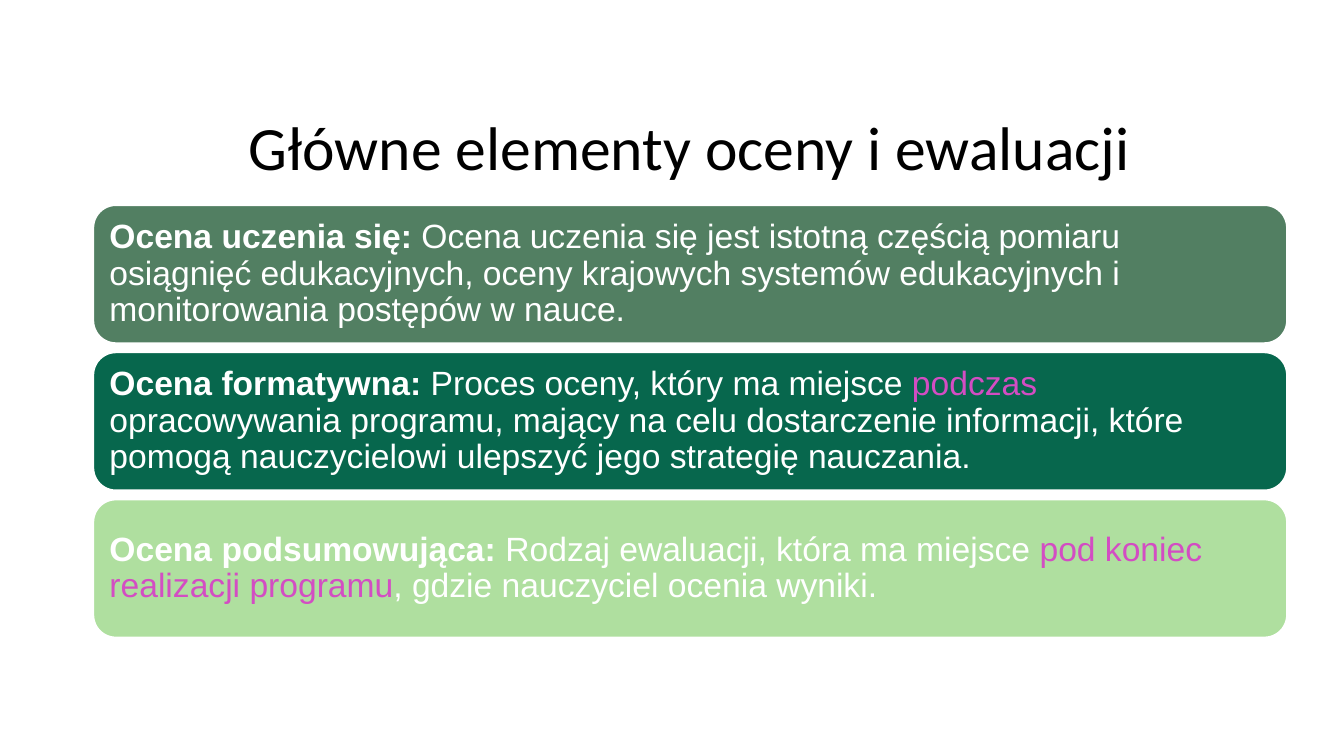
from pptx import Presentation
from pptx.dml.color import RGBColor
from pptx.enum import shapes, text
from pptx.util import Inches, Pt

WHITE = RGBColor(0xFF, 0xFF, 0xFF)
BLACK = RGBColor(0x00, 0x00, 0x00)
PINK = RGBColor(0xD3, 0x4D, 0xC3)
SAGE = RGBColor(0x52, 0x7F, 0x62)
DARK_GREEN = RGBColor(0x07, 0x67, 0x4D)
LIGHT_GREEN = RGBColor(0xAF, 0xDF, 0x9F)

TITLE = "Główne elementy oceny i ewaluacji"
# Each panel: fill, bold term, then (text, colour) pieces of its definition
PANELS = [
    (SAGE, "Ocena uczenia się: ", [
        ("Ocena uczenia się jest istotną częścią pomiaru osiągnięć edukacyjnych, "
         "oceny krajowych systemów edukacyjnych i monitorowania postępów w nauce.", WHITE),
    ]),
    (DARK_GREEN, "Ocena formatywna: ", [
        ("Proces oceny, który ma miejsce ", WHITE),
        ("podczas", PINK),
        (" opracowywania programu, mający na celu dostarczenie informacji, "
         "które pomogą nauczycielowi ulepszyć jego strategię nauczania.", WHITE),
    ]),
    (LIGHT_GREEN, "Ocena podsumowująca: ", [
        ("Rodzaj ewaluacji, która ma miejsce ", WHITE),
        ("pod koniec realizacji programu", PINK),
        (", gdzie nauczyciel ocenia wyniki.", WHITE),
    ]),
]
PANEL_LEFT, PANEL_TOP = 0.92, 2.03
PANEL_WIDTH, PANEL_HEIGHT, PANEL_STEP = 11.85, 1.38, 1.46


def set_attributes(target, values):
    for name, value in values.items():
        setattr(target, name, value)


def add_run(paragraph, content, color, **font_values):
    run = paragraph.add_run()
    run.text = content
    set_attributes(run.font, font_values)
    run.font.color.rgb = color


def format_frame(frame, alignment, vertical_margin):
    """Set the frame's layout and return its first paragraph."""
    set_attributes(frame, {
        "word_wrap": True,
        "auto_size": text.MSO_AUTO_SIZE.NONE,
        "vertical_anchor": text.MSO_ANCHOR.MIDDLE,
        "margin_left": Inches(0.1),
        "margin_right": Inches(0.1),
        "margin_top": Inches(vertical_margin),
        "margin_bottom": Inches(vertical_margin),
    })
    paragraph = frame.paragraphs[0]
    set_attributes(paragraph, {
        "alignment": alignment,
        "line_spacing": 0.9,
        "space_before": Pt(0),
    })
    return paragraph


def fill_title(slide):
    title = slide.shapes.title
    set_attributes(title, {
        "left": Inches(1.09),
        "top": Inches(0.82),
        "width": Inches(11.5),
        "height": Inches(1.35),
    })
    paragraph = format_frame(title.text_frame, text.PP_ALIGN.CENTER, 0.05)
    add_run(paragraph, TITLE, BLACK, name="Calibri", size=Pt(44))


def add_panel(slide, top, fill_color, term, definition):
    panel = slide.shapes.add_shape(
        shapes.MSO_SHAPE.ROUNDED_RECTANGLE, Inches(PANEL_LEFT), Inches(top),
        Inches(PANEL_WIDTH), Inches(PANEL_HEIGHT))
    panel.shadow.inherit = False
    panel.fill.solid()
    panel.fill.fore_color.rgb = fill_color
    panel.line.color.rgb = WHITE
    panel.line.width = Pt(2)
    paragraph = format_frame(panel.text_frame, text.PP_ALIGN.LEFT, 0.1)
    add_run(paragraph, term, WHITE, name="Arial", size=Pt(24), bold=True)
    for content, color in definition:
        add_run(paragraph, content, color, name="Arial", size=Pt(24), bold=False)


def main():
    presentation = Presentation()
    presentation.slide_width = Inches(13.33)
    presentation.slide_height = Inches(7.5)
    title_only = presentation.slide_layouts[5]
    slide = presentation.slides.add_slide(title_only)
    fill_title(slide)
    for index, (fill_color, term, definition) in enumerate(PANELS):
        add_panel(slide, PANEL_TOP + index * PANEL_STEP, fill_color, term, definition)
    presentation.save("out.pptx")


if __name__ == "__main__":
    main()
